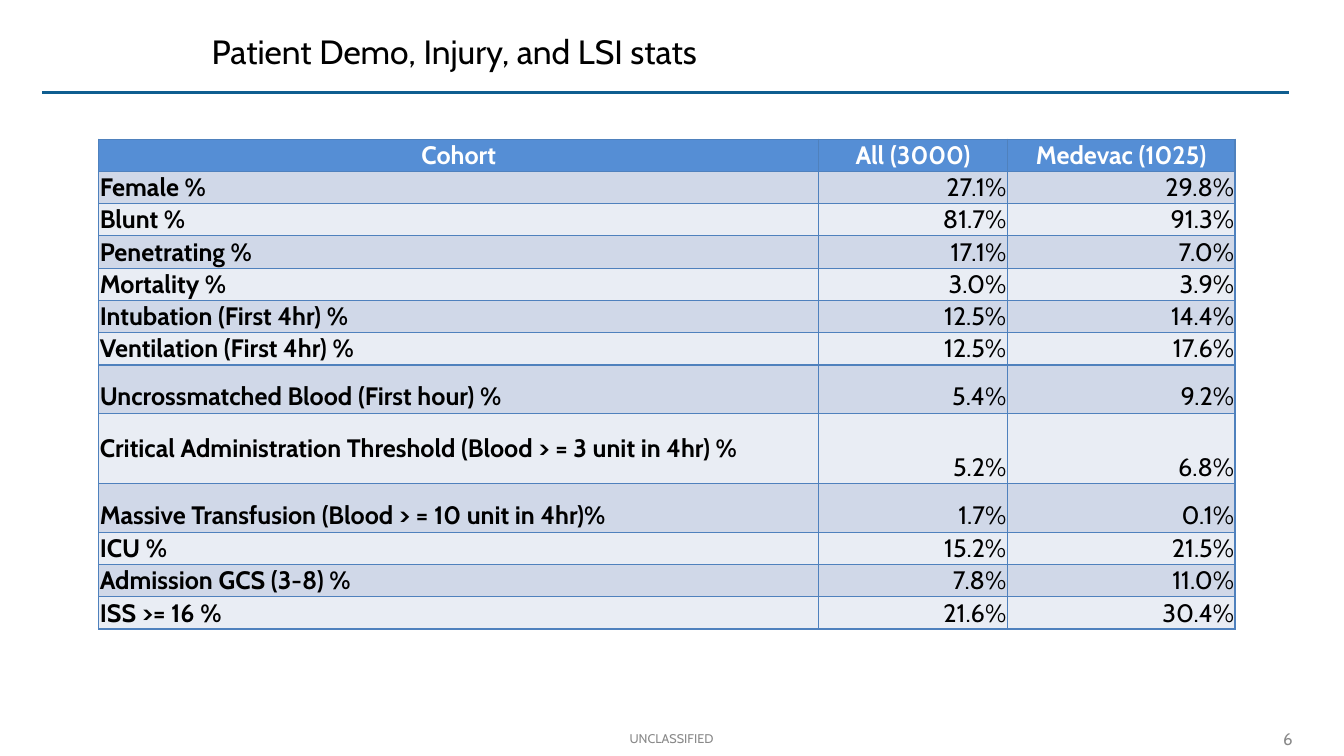
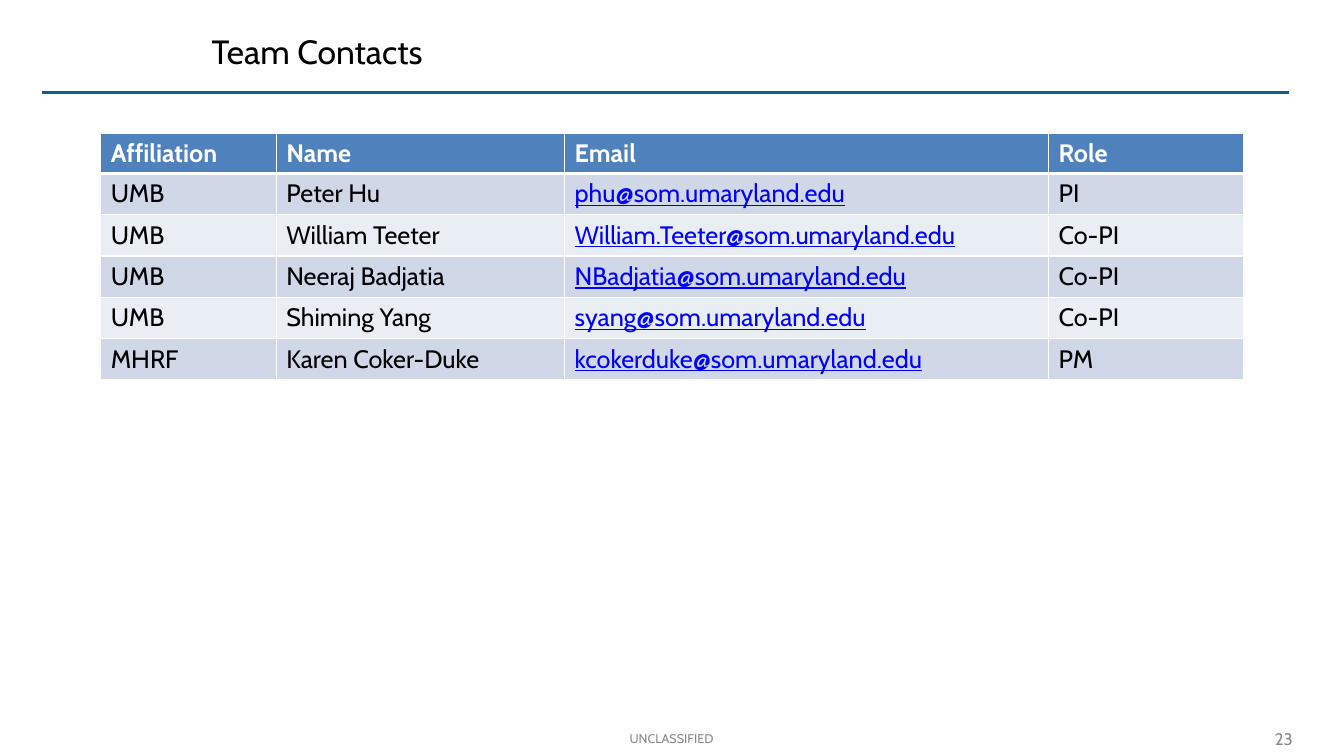
from dataclasses import dataclass

from lxml import etree
from pptx import Presentation
from pptx.dml.color import RGBColor
from pptx.enum.shapes import MSO_CONNECTOR
from pptx.enum.text import MSO_ANCHOR, MSO_AUTO_SIZE, PP_ALIGN
from pptx.oxml.ns import qn
from pptx.util import Inches, Pt

LEFT, CENTER, RIGHT = PP_ALIGN.LEFT, PP_ALIGN.CENTER, PP_ALIGN.RIGHT
TOP, MIDDLE, BOTTOM = MSO_ANCHOR.TOP, MSO_ANCHOR.MIDDLE, MSO_ANCHOR.BOTTOM
NO_AUTOFIT = MSO_AUTO_SIZE.NONE
STRAIGHT = MSO_CONNECTOR.STRAIGHT
TITLE_ONLY = 5


@dataclass(frozen=True)
class Theme:
    """Colours, font and type sizes shared by the deck."""
    font: str = "Cabin"
    ink: str = "000000"
    paper: str = "FFFFFF"
    muted: str = "898989"
    rule: str = "0F5E90"
    link: str = "0000FF"
    accent: str = "4F81BD"
    accent_light: str = "558ED5"
    bands: tuple = ("D0D8E8", "E9EDF4")
    title_size: int = 24
    table_size: int = 18
    number_size: int = 12
    footer_size: int = 9


THEME = Theme()

STATS = [
    ("Cohort", "All (3000)", "Medevac (1025)"),
    ("Female %", "27.1%", "29.8%"),
    ("Blunt %", "81.7%", "91.3%"),
    ("Penetrating %", "17.1%", "7.0%"),
    ("Mortality %", "3.0%", "3.9%"),
    ("Intubation (First 4hr) %", "12.5%", "14.4%"),
    ("Ventilation (First 4hr) %", "12.5%", "17.6%"),
    ("Uncrossmatched Blood (First hour) %", "5.4%", "9.2%"),
    ("Critical Administration Threshold (Blood > = 3 unit in 4hr) %", "5.2%", "6.8%"),
    ("Massive Transfusion (Blood > = 10 unit in 4hr)%", "1.7%", "0.1%"),
    ("ICU %", "15.2%", "21.5%"),
    ("Admission GCS (3-8) %", "7.8%", "11.0%"),
    ("ISS >= 16 %", "21.6%", "30.4%"),
]
STAT_HEIGHTS = [0.32] * 7 + [0.48, 0.7, 0.48] + [0.32] * 3
THRESHOLD_ROW = 8

CONTACTS = [
    ("Affiliation", "Name", "Email", "Role"),
    ("UMB", "Peter Hu", "phu@som.umaryland.edu", "PI"),
    ("UMB", "William Teeter", "William.Teeter@som.umaryland.edu", "Co-PI"),
    ("UMB", "Neeraj Badjatia", "NBadjatia@som.umaryland.edu", "Co-PI"),
    ("UMB", "Shiming Yang", "syang@som.umaryland.edu", "Co-PI"),
    ("MHRF", "Karen Coker-Duke", "kcokerduke@som.umaryland.edu", "PM"),
]
CONTACT_HEIGHTS = [0.38] + [0.41] * 5
EMAIL_COLUMN = 2


def write_text(frame, text, *, size, color=THEME.ink, bold=False, underline=False, align=LEFT):
    """Write one formatted paragraph into a text frame."""
    para = frame.paragraphs[0]
    para.alignment = align
    span = para.add_run()
    span.text = text
    span.font.name = THEME.font
    span.font.size = Pt(size)
    span.font.bold = bold
    span.font.underline = underline
    span.font.color.rgb = RGBColor.from_string(color)


def add_label(page, box, text, **text_format):
    """Add a vertically centred text box."""
    frame = page.shapes.add_textbox(*map(Inches, box)).text_frame
    frame.word_wrap = True
    frame.vertical_anchor = MIDDLE
    write_text(frame, text, **text_format)


def add_title(page, box, text):
    """Place and fill the title placeholder."""
    title = page.shapes.title
    title.left, title.top, title.width, title.height = map(Inches, box)
    frame = title.text_frame
    frame.word_wrap = True
    frame.auto_size = NO_AUTOFIT
    frame.vertical_anchor = MIDDLE
    write_text(frame, text, size=THEME.title_size)


def add_rule(page, left, top, width):
    """Draw the horizontal rule below the title."""
    rule = page.shapes.add_connector(
        STRAIGHT, Inches(left), Inches(top), Inches(left + width), Inches(top))
    rule.line.color.rgb = RGBColor.from_string(THEME.rule)
    rule.line.width = Pt(1.75)
    etree.SubElement(rule._element.spPr, qn("a:effectLst"))


def add_page(deck, title, number):
    """Add a page with its title, rule, marking and number."""
    page = deck.slides.add_slide(deck.slide_layouts[TITLE_ONLY])
    add_rule(page, 0.42, 0.92, 12.36)
    add_title(page, (2, 0.17, 10.78, 0.67), title)
    add_label(page, (1.94, 7.16, 9.44, 0.33), "UNCLASSIFIED",
              size=THEME.footer_size, color=THEME.muted, align=CENTER)
    add_label(page, (11.81, 7.17, 1.11, 0.32), str(number),
              size=THEME.number_size, color=THEME.muted, align=RIGHT)
    return page


def set_borders(cell, color, top=1, bottom=1):
    """Outline a cell, with its own top and bottom widths."""
    properties = cell._tc.get_or_add_tcPr()
    for side, width in (("L", 1), ("R", 1), ("T", top), ("B", bottom)):
        line = etree.SubElement(properties, qn(f"a:ln{side}"), w=str(Pt(width)))
        fill = etree.SubElement(line, qn("a:solidFill"))
        etree.SubElement(fill, qn("a:srgbClr"), val=color)


def add_grid(page, left, top, rows, widths, heights, *, header_fill, border,
             header_rule=1, margins=(0.1, 0.05), anchor=TOP, style):
    """Add a banded table whose text format comes from style(row, column)."""
    box = map(Inches, (left, top, sum(widths), sum(heights)))
    table = page.shapes.add_table(len(rows), len(widths), *box).table
    table.horz_banding = False
    for column, width in zip(table.columns, widths):
        column.width = Inches(width)
    for row, height in zip(table.rows, heights):
        row.height = Inches(height)
    for r, values in enumerate(rows):
        for c, value in enumerate(values):
            cell = table.cell(r, c)
            cell.margin_left = cell.margin_right = Inches(margins[0])
            cell.margin_top = cell.margin_bottom = Inches(margins[1])
            cell.vertical_anchor = anchor
            set_borders(cell, border, top=header_rule if r == 1 else 1,
                        bottom=header_rule if r == 0 else 1)
            cell.fill.solid()
            fill = THEME.bands[(r - 1) % 2] if r else header_fill
            cell.fill.fore_color.rgb = RGBColor.from_string(fill)
            write_text(cell.text_frame, value, size=THEME.table_size, **style(r, c))
    return table


def stat_style(row, column):
    """Give the text format of a statistics cell."""
    if row == 0:
        return {"color": THEME.paper, "bold": True, "align": CENTER}
    return {"bold": column == 0, "align": RIGHT if column else LEFT}


def contact_style(row, column):
    """Give the text format of a contact cell."""
    if row == 0:
        return {"color": THEME.paper, "bold": True}
    if column == EMAIL_COLUMN:
        return {"color": THEME.link, "underline": True}
    return {}


def add_stats_page(deck):
    """Build the cohort statistics page."""
    page = add_page(deck, "Patient Demo, Injury, and LSI stats", 6)
    table = add_grid(page, 0.98, 1.38, STATS, (7.14, 1.87, 2.26), STAT_HEIGHTS,
                     header_fill=THEME.accent_light, border=THEME.accent,
                     margins=(0.01, 0.01), anchor=BOTTOM, style=stat_style)
    table.cell(THRESHOLD_ROW, 0).vertical_anchor = MIDDLE


def add_contacts_page(deck):
    """Build the team contacts page."""
    page = add_page(deck, "Team Contacts", 23)
    add_grid(page, 1, 1.32, CONTACTS, (1.74, 2.86, 4.8, 1.93), CONTACT_HEIGHTS,
             header_fill=THEME.accent, border=THEME.paper, header_rule=3,
             style=contact_style)


def main():
    """Build and save the deck."""
    deck = Presentation()
    deck.slide_width, deck.slide_height = Inches(13.33), Inches(7.5)
    add_stats_page(deck)
    add_contacts_page(deck)
    deck.save("out.pptx")


if __name__ == "__main__":
    main()
